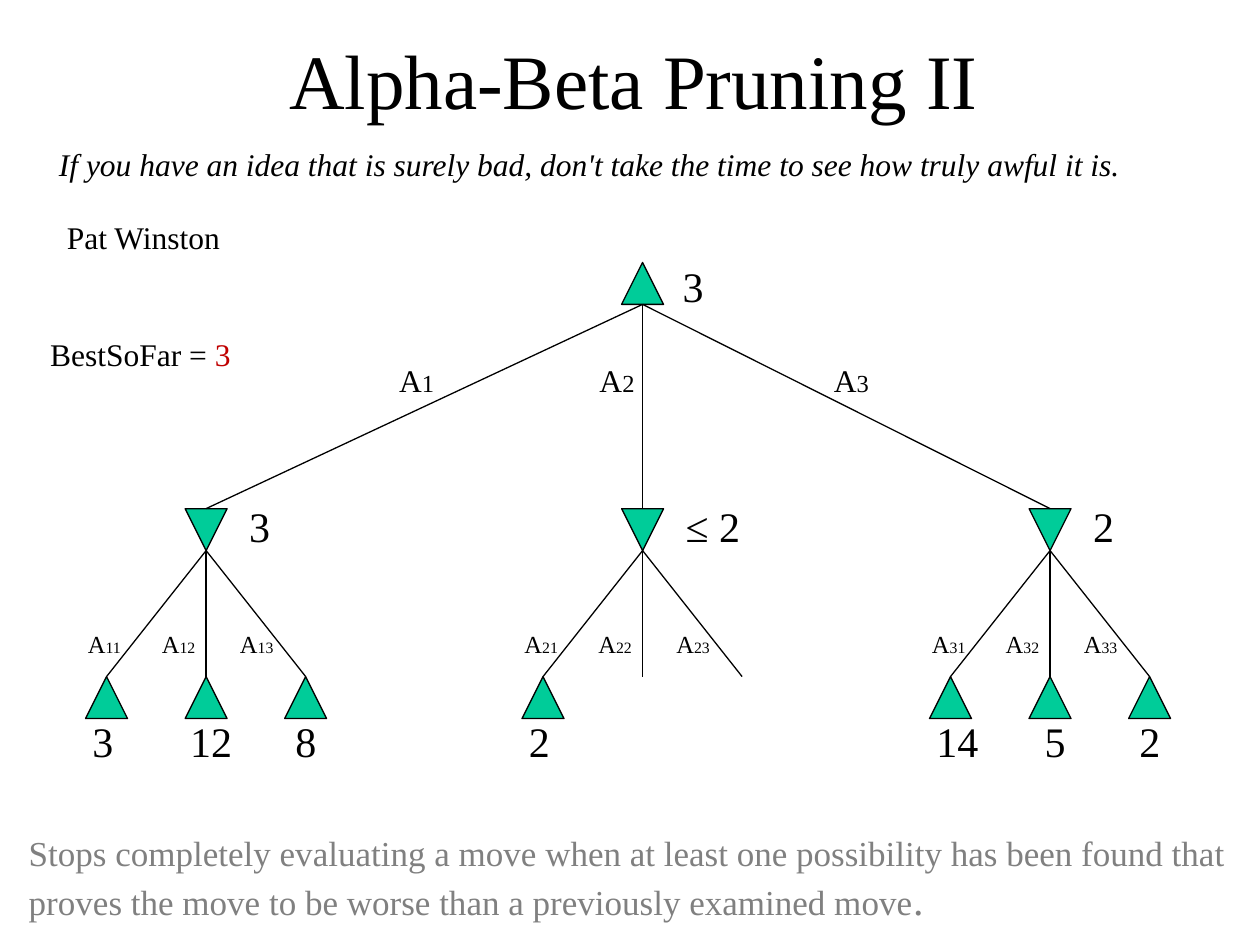
from lxml import etree
from pptx import Presentation
from pptx import util as u
from pptx.dml.color import RGBColor
from pptx.enum import shapes, text
from pptx.oxml.ns import qn

COLORS = {"ink": "000000", "node": "00CC99", "note": "808080", "best": "C00000"}
FONT = "Times New Roman"

prs = Presentation()
prs.slide_width, prs.slide_height = u.Inches(10), u.Inches(7.5)
CELL = prs.slide_width / 100  # grid of 100 columns by 75 rows
s = prs.slides.add_slide(prs.slide_layouts[6])


def add_text(paragraphs, col, row, cols, rows, size=24, align="LEFT", anchor="TOP",
             color="ink", italic=False):
    """Each paragraph is a list of (text, overrides) runs."""
    box = s.shapes.add_textbox(*(round(v * CELL) for v in (col, row, cols, rows)))
    tf = box.text_frame
    tf.word_wrap = True
    tf.vertical_anchor = getattr(text.MSO_ANCHOR, anchor)
    for i, runs in enumerate(paragraphs):
        p = tf.paragraphs[0] if i == 0 else tf.add_paragraph()
        p.alignment = getattr(text.PP_ALIGN, align)
        for words, fmt in runs:
            r = p.add_run()
            r.text = words
            r.font.name = FONT
            r.font.size = u.Pt(fmt.get("size", size))
            r.font.italic = fmt.get("italic", italic)
            r.font.color.rgb = RGBColor.from_string(COLORS[fmt.get("color", color)])
    return tf


def add_edge(x1, y1, x2, y2, child=None):
    ends = (round(v * CELL) for v in (x1, y1, x2, y2))
    line = s.shapes.add_connector(shapes.MSO_CONNECTOR.STRAIGHT, *ends)
    if child is not None:
        line.end_connect(child, 0)
    line.line.color.rgb = RGBColor.from_string(COLORS["ink"])
    line.line.width = u.Pt(0.75)
    etree.SubElement(line._element.spPr, qn("a:effectLst"))


# Tree layout in grid units
NODE, SPREAD = 3.33, 7.9
ROOT_X, ROOT_Y, MIN_Y, LEAF_Y = 51, 20.83, 40.37, 53.7
branches = [  # centre, backed-up value, leaf values (None = pruned)
    (16.36, "3", ["3", "12", "8"]),
    (ROOT_X, "≤ 2", ["2", None, None]),
    (83.34, "2", ["14", "5", "2"]),
]
action_cols = [31.0 - 0.3, 46.6, 65.2]

# Nodes: upright for max and leaves, turned over for min
nodes = [(ROOT_X, ROOT_Y, 0)]
for x, _, leaves in branches:
    nodes.append((x, MIN_Y, 180))
    nodes += [(x + k * SPREAD, LEAF_Y, 0)
              for k, value in zip((-1, 0, 1), leaves) if value]
placed = {}
for x, y, turn in nodes:
    sp = s.shapes.add_shape(shapes.MSO_SHAPE.ISOSCELES_TRIANGLE,
                            *(round(v * CELL) for v in (x - NODE / 2, y, NODE, NODE)))
    sp.shadow.inherit = False
    sp.rotation = turn
    sp.fill.solid()
    sp.fill.fore_color.rgb = RGBColor.from_string(COLORS["node"])
    sp.line.color.rgb = RGBColor.from_string(COLORS["ink"])
    sp.line.width = u.Pt(0.75)
    placed[x, y] = sp

# Edges, action names and values
add_text([[("3", {})]], 53.2, 20.2, 6, 5)
for i, (x, value, leaves) in enumerate(branches, 1):
    add_edge(ROOT_X, ROOT_Y + NODE, x, MIN_Y)
    add_text([[("A", {}), (str(i), {"size": 14})]], action_cols[i - 1], 28.2, 7, 4, size=18)
    add_text([[(value, {})]], x + 2.43, 39.2, 9.4, 5)
    for j, leaf in enumerate(leaves, 1):
        leaf_x = x + (j - 2) * SPREAD
        add_edge(x, MIN_Y + NODE, leaf_x, LEAF_Y, placed.get((leaf_x, LEAF_Y)))
        add_text([[("A", {}), (f"{i}{j}", {"size": 9})]],
                 x + (-10.36, -4.5, 1.7)[j - 1], 49.4, 6, 3.3, size=14)
        if leaf:
            add_text([[(leaf, {})]], x + (-10, -2.6, 6.1)[j - 1], 56.3, 6, 5,
                     align="CENTER" if j == 2 else "LEFT")

# Title, quotation, best value and conclusion
add_text([[("Alpha-Beta Pruning II", {})]], 7.8, 0, 85, 12.5,
         size=44, align="CENTER", anchor="MIDDLE")
tf = add_text([[("If you have an idea that is surely bad, don't take the time "
                 "to see how truly awful it is.", {})],
               [(" Pat Winston", {"italic": False})]],
              3.7, 11, 91, 14.9, size=18, italic=True)
for p, before in zip(tf.paragraphs, (5, 15)):
    p.space_before, p.space_after = u.Pt(before), u.Pt(5)
add_text([[("BestSoFar = ", {}), ("3", {"color": "best"})]], 3, 26.1, 18, 4, size=18)
add_text([[("Stops completely evaluating a move when at least one possibility has been "
            "found that proves the move to be worse than a previously examined move", {}),
           (".", {"size": 24})]], 1.3, 65.5, 98.7, 8.4, size=20, color="note")

prs.save("out.pptx")
